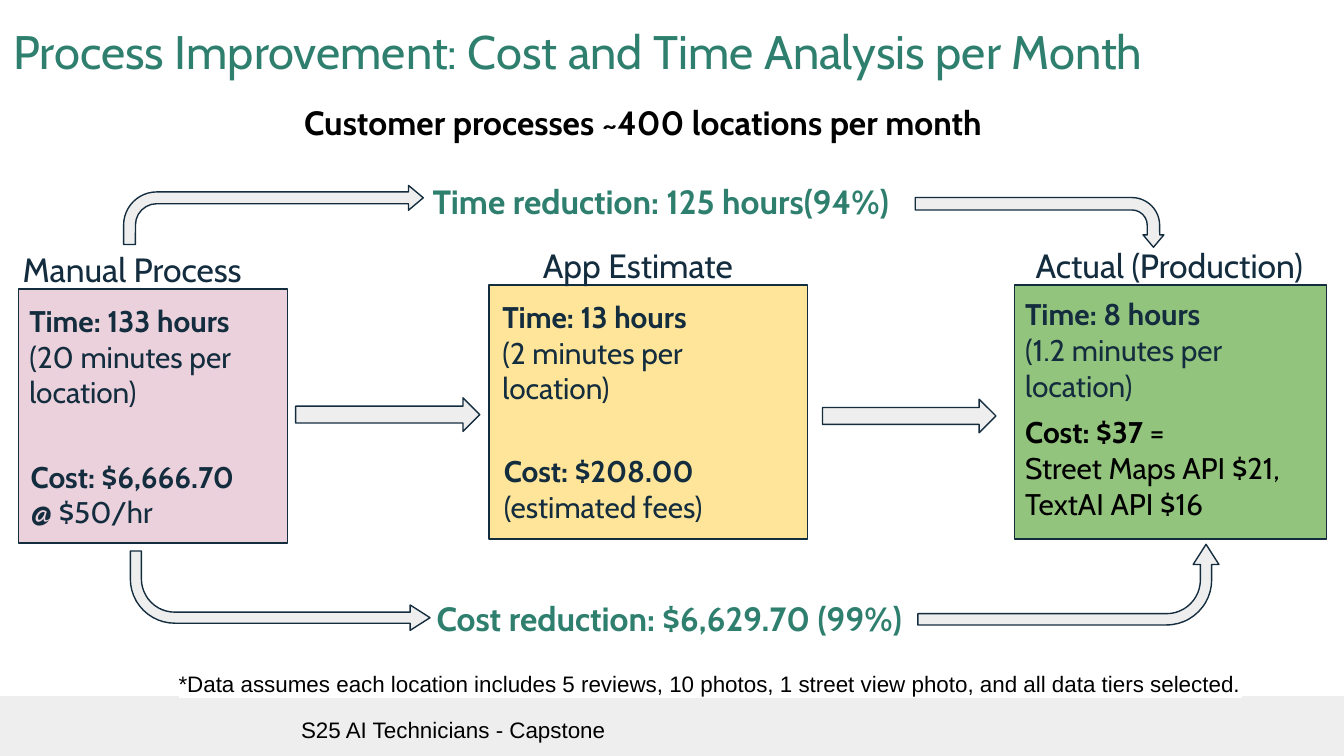
import pptx
import pptx.util
import pptx.dml.color
import pptx.enum.shapes
import pptx.enum.text
import pptx.oxml
import pptx.oxml.ns

Inches = pptx.util.Inches
Shapes = pptx.enum.shapes.MSO_SHAPE
Align = pptx.enum.text.PP_ALIGN
Anchor = pptx.enum.text.MSO_ANCHOR

NAVY, TEAL, BLACK, GRAY, WHITE = "132C3E", "2F7F6F", "000000", "EEEEEE", "FFFFFF"


def color(value):
    return pptx.dml.color.RGBColor.from_string(value)


def write_text(shape, paragraphs, size, text_color=NAVY, font="Cabin",
               align=Align.LEFT, anchor=Anchor.TOP, left_inset=0.1):
    frame = shape.text_frame
    frame.word_wrap = True
    frame.auto_size = pptx.enum.text.MSO_AUTO_SIZE.NONE
    frame.vertical_anchor = anchor
    frame.margin_left = Inches(left_inset)
    frame.margin_top = frame.margin_right = frame.margin_bottom = Inches(0.1)
    for index, runs in enumerate(paragraphs):
        paragraph = frame.add_paragraph() if index else frame.paragraphs[0]
        paragraph.alignment = align
        paragraph.font.size = pptx.util.Pt(size)
        paragraph.font.name = font
        paragraph.font.color.rgb = color(text_color)
        for text, bold in runs:
            run = paragraph.add_run()
            run.text = text
            run.font.bold = bold


def add_text(slide, box, paragraphs, size, **style):
    shape = slide.shapes.add_textbox(*map(Inches, box))
    write_text(shape, paragraphs, size, **style)
    return shape


def add_block(slide, kind, box, fill, line=NAVY):
    shape = slide.shapes.add_shape(kind, *map(Inches, box))
    shape.shadow.inherit = False
    shape.fill.solid()
    shape.fill.fore_color.rgb = color(fill)
    if line:
        shape.line.color.rgb = color(line)
        shape.line.width = pptx.util.Pt(0.75)
    else:
        shape.line.fill.background()
    return shape


def add_bent_arrow(slide, box, thickness, head, rotation=0, flipped=False):
    arrow = add_block(slide, Shapes.BENT_ARROW, box, GRAY)
    for index, value in enumerate((thickness, head, 0.25, 0.56)):
        arrow.adjustments[index] = value
    arrow.rotation = rotation
    if flipped:
        arrow._element.spPr.xfrm.set("flipH", "1")


def highlight(shape, value):
    run = shape.text_frame.paragraphs[0].runs[0]
    namespace = pptx.oxml.ns.nsdecls("a")
    run._r.get_or_add_rPr().append(pptx.oxml.parse_xml(
        f'<a:highlight {namespace}><a:srgbClr val="{value}"/></a:highlight>'))


def add_title(slide, text):
    title = slide.shapes.title
    title.left, title.top, title.width, title.height = map(Inches, (0, 0.07, 9.32, 0.63))
    write_text(title, [[(text, False)]], 25.2, text_color=TEAL)


def add_stage(slide, card, fill, heading, heading_box, heading_align,
              time, time_box, cost, cost_box, cost_color=NAVY):
    add_block(slide, Shapes.RECTANGLE, card, fill)
    add_text(slide, heading_box, [[(heading, False)]], 18, align=heading_align)
    add_text(slide, time_box, time, 16)
    add_text(slide, cost_box, cost, 16, text_color=cost_color)


def main():
    presentation = pptx.Presentation()
    presentation.slide_width = Inches(10)
    presentation.slide_height = Inches(10) * 9 // 16
    slide = presentation.slides.add_slide(presentation.slide_layouts[5])

    footer = add_block(slide, Shapes.RECTANGLE, (0, 5.18, 10, 0.45), GRAY, line=None)
    write_text(footer, [[("S25 AI Technicians - Capstone", False)]], 12, text_color=BLACK,
               font="Arial", anchor=Anchor.BOTTOM, left_inset=2.24)
    add_title(slide, "Process Improvement: Cost and Time Analysis per Month")
    add_text(slide, (0.92, 0.66, 7.73, 0.5),
             [[("Customer processes ~400 locations per month", True)]], 18,
             text_color=BLACK, align=Align.CENTER)

    add_stage(slide, (0.14, 2.15, 2, 1.89), "EAD1DC",
              "Manual Process", (0.07, 1.75, 2.13, 0.5), Align.LEFT,
              [[("Time: 133 hours", True)], [("(20 minutes per location)", False)]],
              (0.12, 2.15, 2.1, 1.01),
              [[("Cost: $6,666.70 ", True), ("@ $50/hr", False)]],
              (0.13, 3.31, 1.91, 0.74))
    add_stage(slide, (3.64, 2.12, 2.37, 1.89), "FFE599",
              "App Estimate", (3.94, 1.72, 1.69, 0.5), Align.LEFT,
              [[("Time: 13 hours", True)], [("(2 minutes per location)", False)]],
              (3.64, 2.12, 2.37, 1.01),
              [[("Cost: $208.00", True), (" (estimated fees)", False)]],
              (3.65, 3.27, 2.32, 0.74))
    add_stage(slide, (7.55, 2.12, 2.32, 1.89), "93C47D",
              "Actual (Production)", (7.5, 1.72, 2.4, 0.5), Align.CENTER,
              [[("Time: 8 hours", True)], [("(1.2 minutes per location)", False)]],
              (7.53, 2.1, 2.32, 1.01),
              [[("Cost: $37", True), (" =", False)],
               [("Street Maps API $21, TextAI API $16", False)]],
              (7.53, 2.98, 2.37, 1.01), cost_color=BLACK)

    for box in ((2.2, 2.96, 1.37, 0.25), (6.12, 2.97, 1.29, 0.25)):
        add_block(slide, Shapes.RIGHT_ARROW, box, GRAY)
    add_bent_arrow(slide, (0.92, 1.38, 2.23, 0.44), 0.2, 0.21)
    add_bent_arrow(slide, (7.55, 0.73, 0.37, 1.85), 0.25, 0.21, rotation=90)
    add_bent_arrow(slide, (0.97, 4.1, 2.23, 0.59), 0.14, 0.16, rotation=180, flipped=True)
    add_bent_arrow(slide, (7.65, 3.23, 0.6, 2.24), 0.14, 0.16, rotation=90, flipped=True)

    for left, top, text in ((3.12, 1.25, "Time reduction: 125 hours(94%)"),
                            (3.15, 4.35, "Cost reduction: $6,629.70 (99%)")):
        add_text(slide, (left, top, 4.19, 0.5), [[(text, True)]], 18, text_color=TEAL)

    footnote = add_text(
        slide, (1.23, 4.89, 8.12, 0.4),
        [[("*Data assumes each location includes 5 reviews, 10 photos, "
           "1 street view photo, and all data tiers selected.", False)]],
        12, text_color=BLACK, font="Arial")
    highlight(footnote, WHITE)

    presentation.save("out.pptx")


if __name__ == "__main__":
    main()
